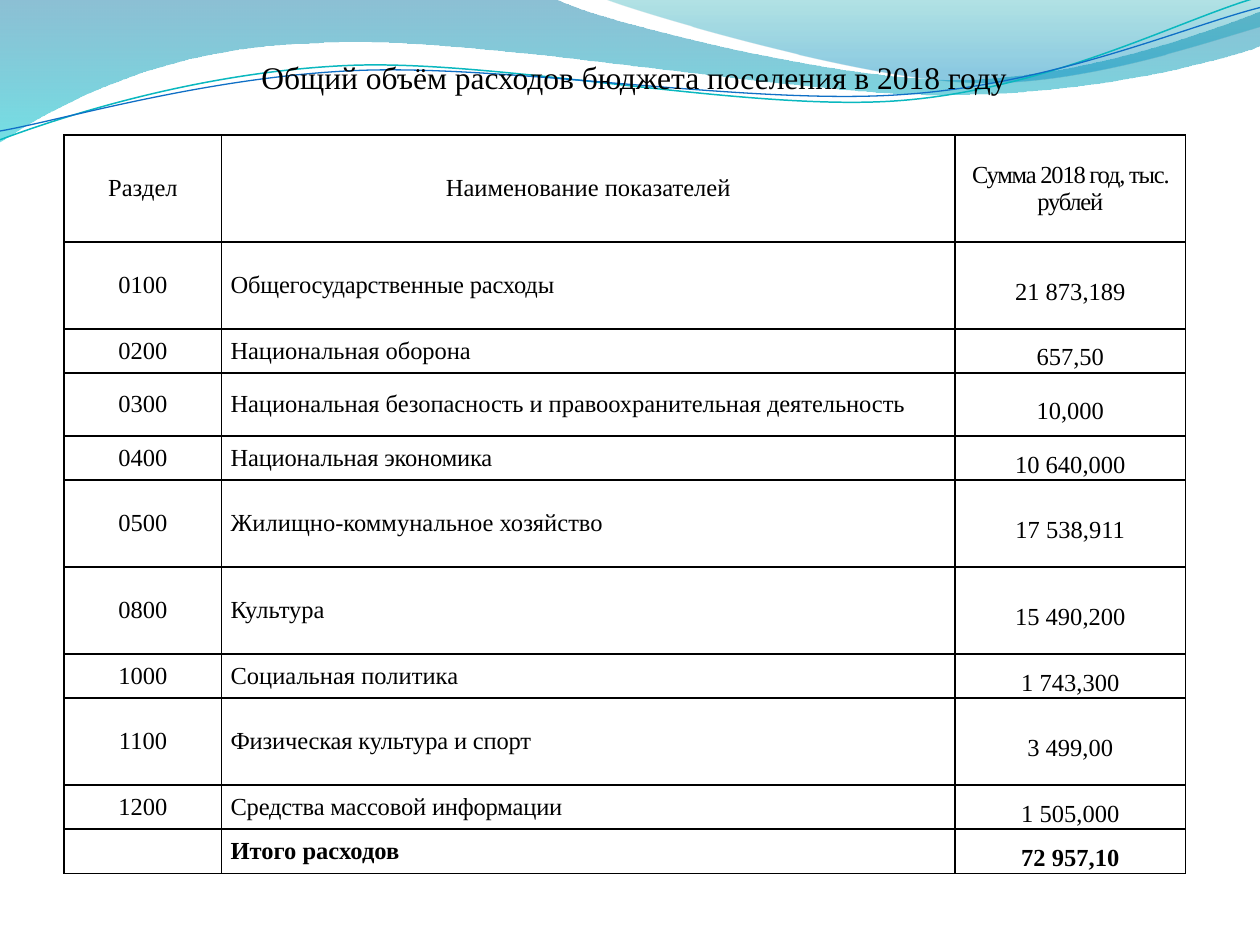
from lxml import etree
from pptx import Presentation
from pptx.dml.color import RGBColor
from pptx.enum.text import MSO_ANCHOR, PP_ALIGN
from pptx.oxml.ns import qn
from pptx.util import Inches, Pt

CENTER, LEFT = PP_ALIGN.CENTER, PP_ALIGN.LEFT
MIDDLE, BOTTOM = MSO_ANCHOR.MIDDLE, MSO_ANCHOR.BOTTOM
BLACK = RGBColor(0x00, 0x00, 0x00)
WHITE = RGBColor(0xFF, 0xFF, 0xFF)
DEEP_BLUE = RGBColor(0x00, 0x74, 0xA1)
CYAN = RGBColor(0x00, 0xC6, 0xCF)
TEAL = RGBColor(0x00, 0xA1, 0xA9)
SKY = RGBColor(0x00, 0x8B, 0xBF)
LINE_TEAL = RGBColor(0x0A, 0xB8, 0xBF)
LINE_BLUE = RGBColor(0x0F, 0x6F, 0xC6)
FONT = "Times New Roman"

COLUMN_WIDTHS = (1.25, 5.82, 1.83)
HEADER_HEIGHT = 0.85
TALL = 0.69
SHORT = TALL / 2

TITLE = "Общий объём расходов бюджета поселения в 2018 году"
HEADER = ("Раздел", "Наименование показателей", "Сумма 2018 год, тыс. рублей")
# Section, name, amount, row height, letter spacing of the name
EXPENSES = [
    ("0100", "Общегосударственные расходы", "21 873,189", TALL, -0.1),
    ("0200", "Национальная оборона", "657,50", SHORT, -0.05),
    ("0300", "Национальная безопасность и правоохранительная деятельность", "10,000", 0.5, -0.05),
    ("0400", "Национальная экономика", "10 640,000", SHORT, -0.1),
    ("0500", "Жилищно-коммунальное хозяйство", "17 538,911", TALL, 0),
    ("0800", "Культура", "15 490,200", TALL, 0),
    ("1000", "Социальная политика", "1 743,300", SHORT, 0),
    ("1100", "Физическая культура и спорт", "3 499,00", TALL, -0.1),
    ("1200", "Средства массовой информации", "1 505,000", SHORT, -0.1),
    ("", "Итого расходов", "72 957,10", SHORT, 0),
]

# Outlines: a pair is a straight step, six numbers are a Bezier curve
BANDS = [
    {"outline": [(0, 0), (4.4, -0.01), (4.76, 0.17, 6.64, 0.63, 7.58, 0.63),
                 (8.53, 0.63, 9.58, 0.26, 10, 0.09), (10.01, 0.36),
                 (9.83, 0.44, 8.7, 0.76, 7.46, 0.75), (6.22, 0.75, 3.82, 0.28, 2.57, 0.34),
                 (1.29, 0.36, 0.46, 0.83, -0.01, 1.13)],
     "stops": [(0, DEEP_BLUE, 45), (1, CYAN, 55)]},
    {"outline": [(4.79, -0.01), (5.09, 0.11, 6.82, 0.62, 7.69, 0.65),
                 (8.56, 0.69, 9.61, 0.32, 10, 0.21), (10, 0)],
     "stops": [(0, TEAL, 30), (0.8, SKY, 45)]},
]
WAVES = [
    {"outline": [(0, 1.11), (0.48, 0.93, 1.58, 0.57, 2.77, 0.52),
                 (3.95, 0.47, 5.93, 0.89, 7.13, 0.8), (8.33, 0.71, 9.38, 0.15, 9.98, -0.02)],
     "color": LINE_TEAL, "width": 0.85},
    {"outline": [(0, 1.04), (0.47, 0.96, 1.64, 0.61, 2.83, 0.56),
                 (4.03, 0.51, 5.97, 0.84, 7.17, 0.75), (8.36, 0.67, 9.41, 0.21, 10, 0.06)],
     "color": LINE_BLUE, "width": 0.75},
]


def add_outline(slide, outline, close):
    """Draw every point as a straight step, then join triples into curves."""
    start, *points = [(Inches(step[i]), Inches(step[i + 1]))
                      for step in outline for i in range(0, len(step), 2)]
    builder = slide.shapes.build_freeform(*start, scale=1.0)
    builder.add_line_segments(points, close=close)
    shape = builder.convert_to_shape()
    shape.shadow.inherit = False
    segments = iter(list(shape._element.iter(qn("a:lnTo"))))
    for step in outline[1:]:
        first = next(segments)
        if len(step) == 6:
            first.tag = qn("a:cubicBezTo")
            for segment in (next(segments), next(segments)):
                first.append(segment[0])
                segment.getparent().remove(segment)
    return shape


def add_band(slide, outline, stops):
    band = add_outline(slide, outline, True)
    band.line.fill.background()
    band.fill.gradient()
    band.fill.gradient_angle = 270
    for stop, (position, color, _) in zip(band.fill.gradient_stops, stops):
        stop.position = position
        stop.color.rgb = color
    for node, (_, _, opacity) in zip(band._element.spPr.iter(qn("a:srgbClr")), stops):
        etree.SubElement(node, qn("a:alpha"), val=str(opacity * 1000))


def add_wave(slide, outline, color, width):
    wave = add_outline(slide, outline, False)
    wave.fill.background()
    wave.line.color.rgb = color
    wave.line.width = Pt(width)


def write(frame, text, align, size, bold=False, line_spacing=1.0, spacing=0):
    paragraph = frame.paragraphs[0]
    paragraph.alignment = align
    paragraph.line_spacing = line_spacing
    run = paragraph.add_run()
    run.text = text
    for name, value in {"name": FONT, "size": Pt(size), "bold": bold}.items():
        setattr(run.font, name, value)
    run.font.color.rgb = BLACK
    if spacing:
        run._r.get_or_add_rPr().set("spc", str(round(spacing * 100)))


def add_borders(cell):
    properties = cell._tc.get_or_add_tcPr()
    for i, side in enumerate(("lnL", "lnR", "lnT", "lnB")):
        border = etree.Element(qn(f"a:{side}"), w=str(Pt(1)))
        fill = etree.SubElement(border, qn("a:solidFill"))
        etree.SubElement(fill, qn("a:srgbClr"), val=str(BLACK))
        properties.insert(i, border)


def add_title(slide):
    box = slide.shapes.add_textbox(Inches(0.35), Inches(0.29), Inches(9.37), Inches(0.47))
    frame_format = {"word_wrap": True, "vertical_anchor": BOTTOM, "margin_left": 0,
                    "margin_right": 0, "margin_top": Inches(0.05), "margin_bottom": 0}
    for name, value in frame_format.items():
        setattr(box.text_frame, name, value)
    write(box.text_frame, TITLE, CENTER, 18)


def add_expense_table(slide):
    heights = [HEADER_HEIGHT] + [expense[3] for expense in EXPENSES]
    table = slide.shapes.add_table(
        len(heights), len(COLUMN_WIDTHS), Inches(0.51), Inches(1.07),
        Inches(sum(COLUMN_WIDTHS)), Inches(sum(heights))).table
    table.first_row = table.horz_banding = False
    for column, width in zip(table.columns, COLUMN_WIDTHS):
        column.width = Inches(width)
    for row, height in zip(table.rows, heights):
        row.height = Inches(height)

    cell_format = {"vertical_anchor": MIDDLE, "margin_left": Inches(0.07),
                   "margin_right": Inches(0.07), "margin_top": 0, "margin_bottom": 0}
    for cell in table.iter_cells():
        for name, value in cell_format.items():
            setattr(cell, name, value)
        cell.fill.solid()
        cell.fill.fore_color.rgb = WHITE
        add_borders(cell)

    for col, (text, spacing) in enumerate(zip(HEADER, (0, 0, -0.7))):
        write(table.cell(0, col).text_frame, text, CENTER, 14, spacing=spacing)
    for row, (section, name, amount, _, spacing) in enumerate(EXPENSES, 1):
        total = not section
        section_cell, name_cell, amount_cell = (table.cell(row, col).text_frame for col in range(3))
        if section:
            write(section_cell, section, CENTER, 14)
        write(name_cell, name, LEFT, 14, bold=total, spacing=spacing)
        write(amount_cell, amount, CENTER, 14, bold=total, line_spacing=1.5)


def main():
    prs = Presentation()
    prs.slide_width, prs.slide_height = Inches(10), Inches(7.5)
    slide = prs.slides.add_slide(prs.slide_layouts[6])
    # Wavy header
    for band in BANDS:
        add_band(slide, **band)
    for wave in WAVES:
        add_wave(slide, **wave)
    # Title and budget
    add_title(slide)
    add_expense_table(slide)
    prs.save("out.pptx")


if __name__ == "__main__":
    main()
